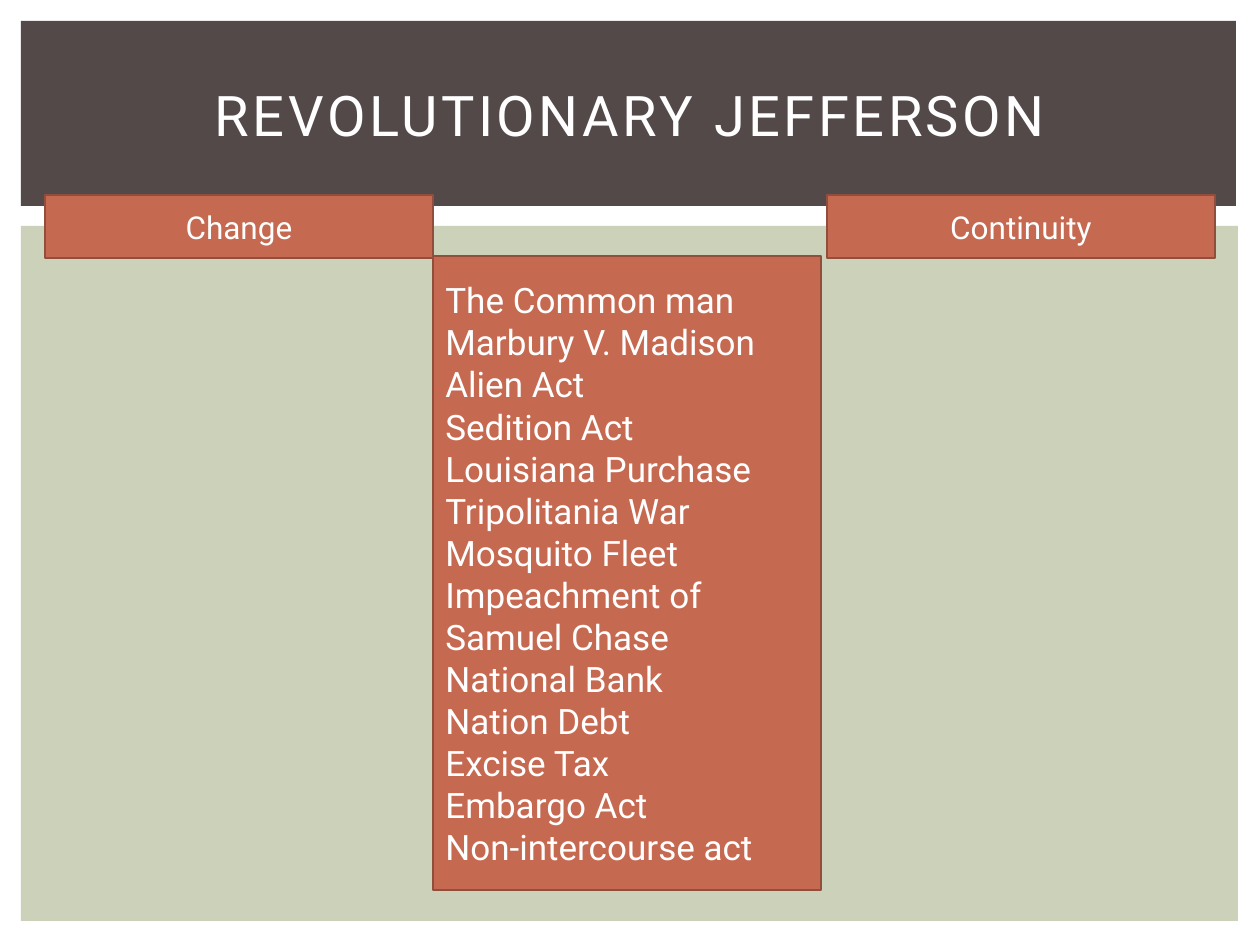
"""Build the Revolutionary Jefferson sorting slide."""
from pptx import Presentation
from pptx.dml.color import RGBColor
from pptx.enum.shapes import MSO_SHAPE as Shape
from pptx.enum.text import MSO_ANCHOR as Anchor, PP_ALIGN as Align
from pptx.util import Emu, Pt

SCALE = 914400 / 126
WHITE = RGBColor(0xFF, 0xFF, 0xFF)
BROWN = RGBColor(0x53, 0x49, 0x49)
SAGE = RGBColor(0xCC, 0xD1, 0xB9)
RUST = RGBColor(0xC6, 0x69, 0x51)
EDGE = RGBColor(0x92, 0x4E, 0x3C)
FONT = "Roboto"
WIDE = 388
TOPICS = [
    "The Common man",
    "Marbury V. Madison",
    "Alien Act",
    "Sedition Act",
    "Louisiana Purchase",
    "Tripolitania War",
    "Mosquito Fleet",
    "Impeachment of Samuel Chase",
    "National Bank",
    "Nation Debt",
    "Excise Tax",
    "Embargo Act",
    "Non-intercourse act",
]


def px(num):
    return Emu(round(num * SCALE))


def write(shape, lines, size=18, align=Align.CENTER, gap=0):
    frame = shape.text_frame
    frame.word_wrap = True
    frame.vertical_anchor = Anchor.MIDDLE
    for i, line in enumerate(lines):
        para = frame.add_paragraph() if i else frame.paragraphs[0]
        para.alignment = align
        para.line_spacing = 1.0
        para.space_before = para.space_after = Pt(0)
        run = para.add_run()
        run.text = line
        font = run.font
        font.name, font.size, font.color.rgb = FONT, Pt(size), WHITE
        if gap:
            font._element.set("spc", str(gap * 100))


def panel(slide, area, fill, edge=None):
    shape = slide.shapes.add_shape(Shape.RECTANGLE, *map(px, area))
    shape.shadow.inherit = False
    shape.fill.solid()
    shape.fill.fore_color.rgb = fill
    if edge is None:
        shape.line.fill.background()
    else:
        shape.line.color.rgb = edge
        shape.line.width = Pt(1.5)
    return shape


def head(slide, text):
    title = slide.shapes.title
    title.element.getparent().append(title.element)
    title.left, title.top, title.width, title.height = map(px, (53, 49, 1155, 130))
    write(title, [text], size=32, gap=2)


def box(slide, left, top, high, lines, **style):
    write(panel(slide, (left, top, WIDE, high), RUST, EDGE), lines, **style)


def main():
    deck = Presentation()
    deck.slide_width, deck.slide_height = px(1260), px(945)
    slide = deck.slides.add_slide(deck.slide_layouts[5])
    panel(slide, (21, 226, 1217, 695), SAGE)
    panel(slide, (21, 21, 1215, 185), BROWN)
    head(slide, "REVOLUTIONARY JEFFERSON")
    for left, label in ((45, "Change"), (827, "Continuity")):
        box(slide, left, 195, 63, [label])
    box(slide, 433, 256, 634, TOPICS, size=20, align=Align.LEFT)
    deck.save("out.pptx")


if __name__ == "__main__":
    main()
